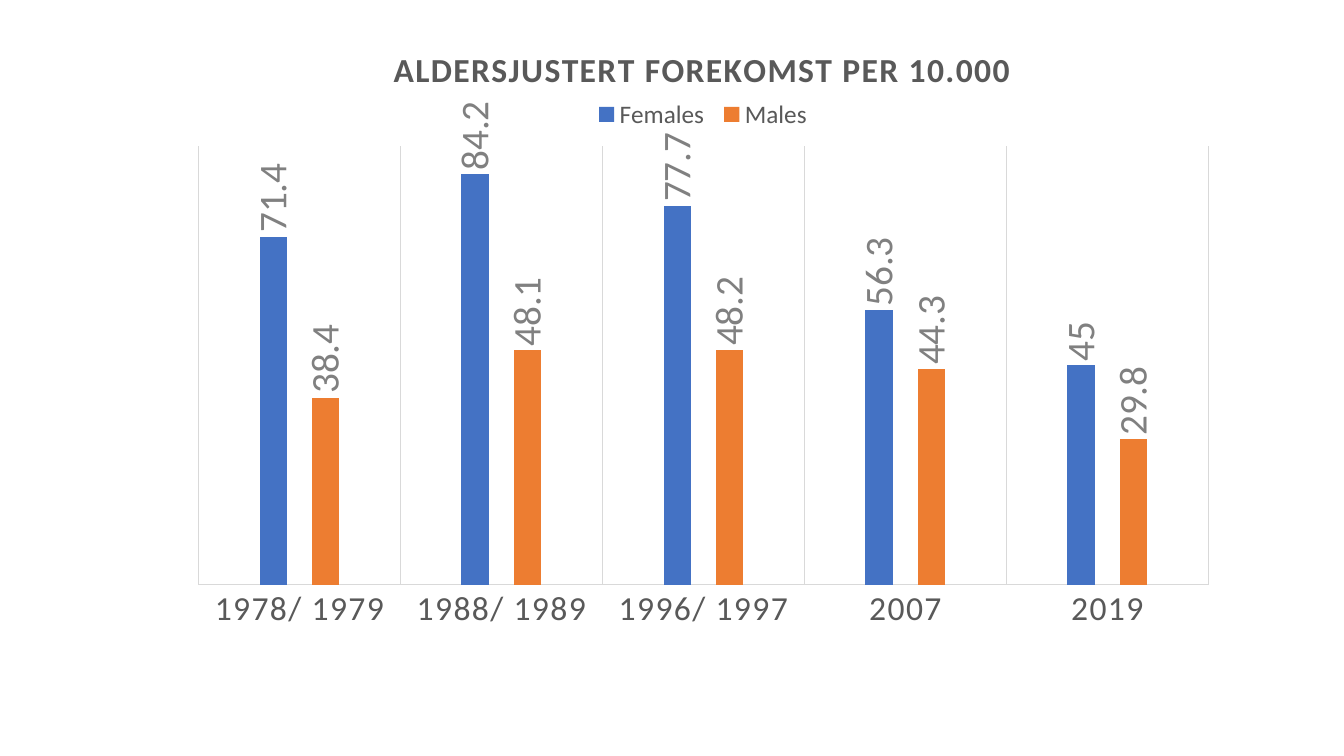
from dataclasses import dataclass

from pptx import Presentation
from pptx.chart.data import CategoryChartData
from pptx.dml.color import RGBColor
from pptx.enum.chart import XL_CHART_TYPE, XL_LABEL_POSITION, XL_LEGEND_POSITION, XL_TICK_MARK
from pptx.oxml import parse_xml
from pptx.oxml.ns import nsdecls
from pptx.util import Inches, Pt

COLUMN = XL_CHART_TYPE.COLUMN_CLUSTERED
OUTSIDE = XL_LABEL_POSITION.OUTSIDE_END
TOP = XL_LEGEND_POSITION.TOP
NO_TICK = XL_TICK_MARK.NONE


@dataclass(frozen=True)
class Theme:
    face: str = "Calibri"
    text: str = "595959"
    label: str = "808080"
    rule: str = "D9D9D9"
    base: int = 10
    head: int = 24
    key: int = 18
    value: int = 28
    track: int = 100
    line: float = 0.75


@dataclass(frozen=True)
class Group:
    name: str
    color: str
    rates: tuple[float, ...]


@dataclass(frozen=True)
class Area:
    left: float
    top: float
    width: float = 0
    height: float = 0


THEME = Theme()
WIDTH, HEIGHT = Inches(13.33), Inches(7.5)
FRAME = Area(0.132, 0.021, 0.782, 0.828)
PLOT = Area(0.02, 0.208, 0.961, 0.701)
TITLE = Area(0.2, 0.04)
KEY = Area(0.39, 0.13, 0.22, 0.055)
YEARS = ("1978/ 1979", "1988/ 1989", "1996/ 1997", "2007", "2019")
GROUPS = (
    Group("Females", "4472C4", (71.4, 84.2, 77.7, 56.3, 45)),
    Group("Males", "ED7D31", (38.4, 48.1, 48.2, 44.3, 29.8)),
)


def apply(target, values: dict) -> None:
    for name, value in values.items():
        setattr(target, name, value)


def style(font, size: int, color: str, bold: bool = False) -> None:
    apply(font, {"name": THEME.face, "size": Pt(size), "bold": bold})
    font.color.rgb = RGBColor.from_string(color)


def rule(line) -> None:
    line.width = Pt(THEME.line)
    line.color.rgb = RGBColor.from_string(THEME.rule)


def place(node, area: Area, index: int, inner: bool = False) -> None:
    for old in node.xpath("c:layout"):
        node.remove(old)
    target = '<c:layoutTarget val="inner"/>' if inner else ""
    sizes = f'<c:w val="{area.width}"/><c:h val="{area.height}"/>' if area.width else ""
    node.insert(index, parse_xml(
        f'<c:layout {nsdecls("c")}><c:manualLayout>{target}'
        '<c:xMode val="edge"/><c:yMode val="edge"/>'
        f'<c:x val="{area.left}"/><c:y val="{area.top}"/>{sizes}'
        '</c:manualLayout></c:layout>'
    ))


def add_bars(slide):
    data = CategoryChartData()
    data.categories = YEARS
    for group in GROUPS:
        data.add_series(group.name, group.rates)
    chart = slide.shapes.add_chart(
        COLUMN, round(FRAME.left * WIDTH), round(FRAME.top * HEIGHT),
        round(FRAME.width * WIDTH), round(FRAME.height * HEIGHT), data,
    ).chart
    style(chart.font, THEME.base, "000000")
    plot = chart.plots[0]
    apply(plot, {"gap_width": 444, "overlap": -90, "vary_by_categories": False})
    for group, bars in zip(GROUPS, plot.series):
        bars.format.fill.solid()
        bars.format.fill.fore_color.rgb = RGBColor.from_string(group.color)
        labels = bars.data_labels
        apply(labels, {"show_value": True, "position": OUTSIDE})
        style(labels.font, THEME.value, THEME.label)
    for body in chart.element.xpath(".//c:dLbls/c:txPr/a:bodyPr"):
        body.set("rot", "-5400000")
        body.set("vert", "horz")
    return chart


def set_axes(chart) -> None:
    years = chart.category_axis
    apply(years, {
        "has_major_gridlines": True,
        "major_tick_mark": NO_TICK,
        "minor_tick_mark": NO_TICK,
    })
    style(years.tick_labels.font, THEME.head, THEME.text)
    rule(years.format.line)
    rule(years.major_gridlines.format.line)
    apply(chart.value_axis, {
        "visible": False,
        "has_major_gridlines": False,
        "minimum_scale": 0,
        "maximum_scale": 90,
    })


def set_heads(chart) -> None:
    apply(chart, {"has_title": True, "has_legend": True})
    para = chart.chart_title.text_frame.paragraphs[0]
    run = para.add_run()
    run.text = "ALDERSJUSTERT FOREKOMST PER 10.000"
    style(run.font, THEME.head, THEME.text, True)
    apply(chart.legend, {"position": TOP, "include_in_layout": False})
    style(chart.legend.font, THEME.key, THEME.text)
    for node in chart.element.xpath(".//c:catAx/c:txPr//a:defRPr | .//c:title//a:rPr"):
        node.set("spc", str(THEME.track))
    root = chart.element
    place(root.xpath("c:chart/c:plotArea")[0], PLOT, 0, True)
    place(root.xpath("c:chart/c:title")[0], TITLE, 1)
    place(root.xpath("c:chart/c:legend")[0], KEY, 1)


def main() -> None:
    deck = Presentation()
    apply(deck, {"slide_width": WIDTH, "slide_height": HEIGHT})
    slide = deck.slides.add_slide(deck.slide_layouts[6])
    chart = add_bars(slide)
    set_axes(chart)
    set_heads(chart)
    deck.save("out.pptx")


if __name__ == "__main__":
    main()
